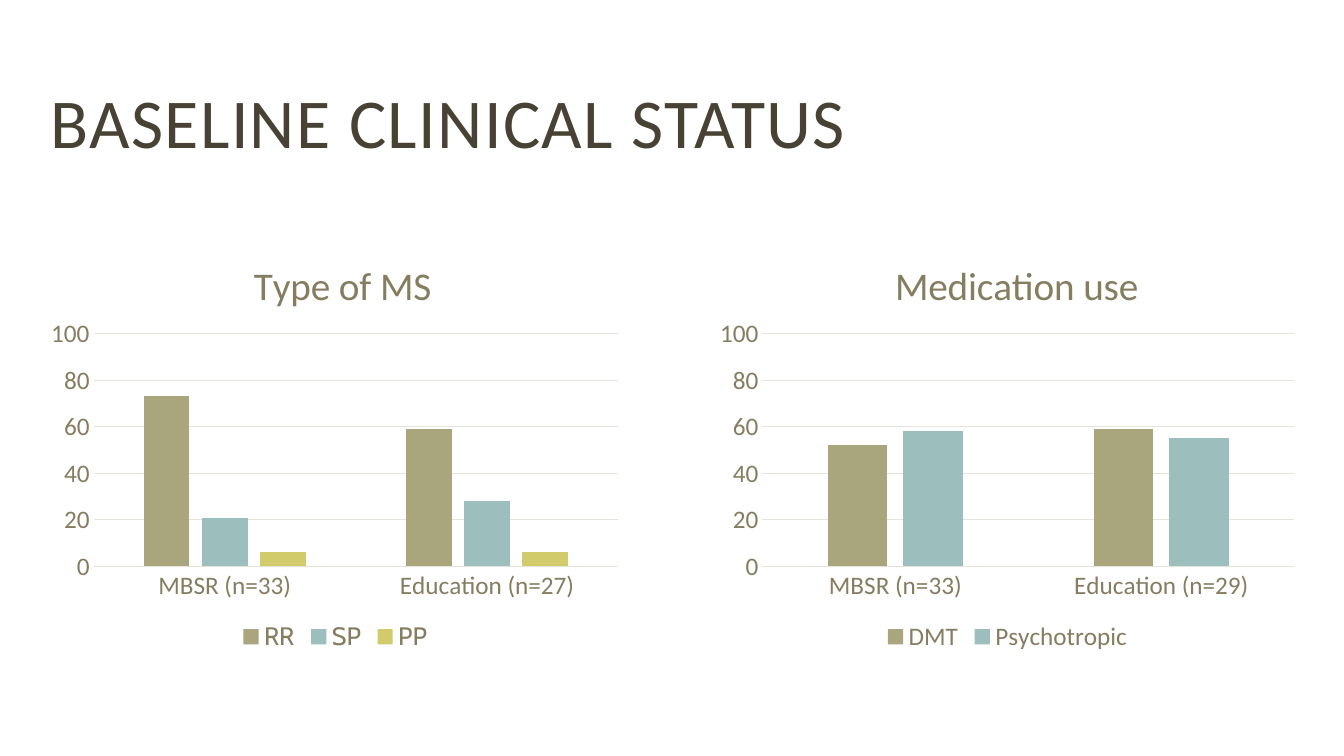
from lxml import etree
from pptx import Presentation
from pptx.chart.data import CategoryChartData
from pptx.dml.color import RGBColor
from pptx.enum.chart import XL_CHART_TYPE, XL_LEGEND_POSITION, XL_TICK_MARK
from pptx.enum.text import MSO_ANCHOR, MSO_AUTO_SIZE, PP_ALIGN
from pptx.oxml.ns import qn
from pptx.util import Cm, Pt

TITLE = "BASELINE CLINICAL STATUS"
COLORS = {"title": "474233", "text": "867D60", "base": "2E2B21", "grid": "E4E2D9",
          "olive": "A9A57C", "teal": "9CBEBD", "lime": "D2CB6C"}
SERIES_COLORS = ["olive", "teal", "lime"]
CHARTS = [
    {"title": "Medication use", "left": 17.86, "width": 15.06, "title_x": 0.3,
     "legend_font": "Calibri", "cats": ["MBSR (n=33)", "Education (n=29)"],
     "series": {"DMT": (52, 59), "Psychotropic": (58, 55)}},
    {"title": "Type of MS", "left": 1.02, "width": 14.86, "title_x": 0.35,
     "legend_font": "Cabin", "cats": ["MBSR (n=33)", "Education (n=27)"],
     "series": {"RR": (73, 59), "SP": (21, 28), "PP": (6, 6)}},
]
CHART_TOP, CHART_HEIGHT = 5.69, 10.87
TITLE_Y = 0.06
PLOT = {"x": 0.09, "y": 0.25, "w": 0.89, "h": 0.54}


def rgb(name):
    return RGBColor.from_string(COLORS[name])


def style(font, size, color, name="Calibri"):
    font.size, font.name, font.bold = Pt(size), name, False
    font.color.rgb = rgb(color)


def write(tf, text, size=18, color="text", align=None, line_spacing=None, tracking=None):
    p = tf.paragraphs[0]
    p.alignment = align
    if line_spacing:
        p.line_spacing = line_spacing
    r = p.add_run()
    r.text = text
    style(r.font, size, color)
    if tracking:
        r._r.get_or_add_rPr().set("spc", str(tracking))


def place(parent, index, **fractions):
    """Give a chart part a fixed place, as fractions of the chart."""
    for old in parent.findall(qn("c:layout")):
        parent.remove(old)
    layout = etree.Element(qn("c:layout"))
    manual = etree.SubElement(layout, qn("c:manualLayout"))
    if "w" in fractions:
        etree.SubElement(manual, qn("c:layoutTarget"), val="inner")
    for axis in "xy":
        etree.SubElement(manual, qn(f"c:{axis}Mode"), val="edge")
    for key, value in fractions.items():
        etree.SubElement(manual, qn(f"c:{key}"), val=str(value))
    parent.insert(index, layout)


def add_column_chart(s, item):
    data = CategoryChartData()
    data.categories = item["cats"]
    for name, values in item["series"].items():
        data.add_series(name, values)
    chart = s.shapes.add_chart(
        XL_CHART_TYPE.COLUMN_CLUSTERED, Cm(item["left"]), Cm(CHART_TOP),
        Cm(item["width"]), Cm(CHART_HEIGHT), data).chart
    style(chart.font, 10, "base", "Cabin")

    # Chart title
    chart.has_title = True
    write(chart.chart_title.text_frame, item["title"], size=28)
    place(chart.chart_title._element, 1, x=item["title_x"], y=TITLE_Y)

    # Columns
    plot = chart.plots[0]
    plot.gap_width, plot.overlap, plot.vary_by_categories = 219, -27, False
    for series, color in zip(plot.series, SERIES_COLORS):
        series.format.fill.solid()
        series.format.fill.fore_color.rgb = rgb(color)
    place(chart._chartSpace.chart.plotArea, 0, **PLOT)

    # Axes and gridlines
    cat, val = chart.category_axis, chart.value_axis
    for axis in (cat, val):
        axis.major_tick_mark = axis.minor_tick_mark = XL_TICK_MARK.NONE
        style(axis.tick_labels.font, 18, "text")
    val.minimum_scale, val.maximum_scale, val.major_unit = 0, 100, 20
    val.has_major_gridlines = True
    val.format.line.fill.background()
    for line in (cat.format.line, val.major_gridlines.format.line):
        line.color.rgb = rgb("grid")
        line.width = Pt(0.75)

    # Legend
    chart.has_legend = True
    chart.legend.position = XL_LEGEND_POSITION.BOTTOM
    chart.legend.include_in_layout = False
    style(chart.legend.font, 18, "text", item["legend_font"])


def main():
    prs = Presentation()
    prs.slide_width, prs.slide_height = Cm(33.87), Cm(19.05)
    s = prs.slides.add_slide(prs.slide_layouts[5])

    # Slide title
    title = s.shapes.title
    title.left, title.top, title.width, title.height = Cm(1.02), Cm(1.14), Cm(27), Cm(4.17)
    tf = title.text_frame
    tf.word_wrap, tf.auto_size = True, MSO_AUTO_SIZE.NONE
    tf.vertical_anchor = MSO_ANCHOR.MIDDLE
    write(tf, TITLE, size=50, color="title", align=PP_ALIGN.LEFT,
          line_spacing=0.8, tracking=100)

    # Charts
    for item in CHARTS:
        add_column_chart(s, item)
    prs.save("out.pptx")


if __name__ == "__main__":
    main()
